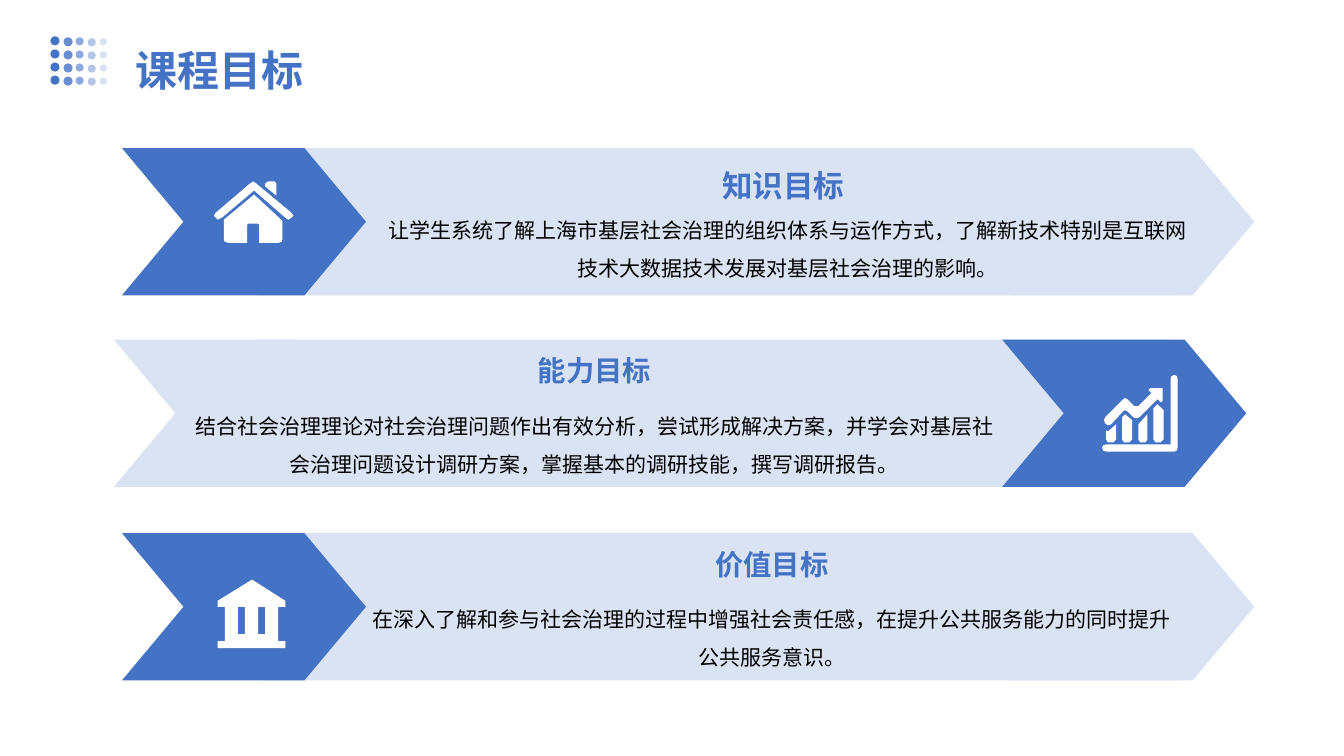
import pptx
import pptx.dml.color
import pptx.enum.shapes
import pptx.enum.text
import pptx.oxml.ns
import pptx.oxml.xmlchemy
import pptx.util

PX = 9144  # 100 px to the inch
BLUE, PALE, WHITE, BLACK = "4472C4", "DAE3F3", "FFFFFF", "000000"
FONT = "Noto Sans CJK SC"
KIND = pptx.enum.shapes.MSO_SHAPE
ALIGN = pptx.enum.text.PP_ALIGN
ANCHOR = pptx.enum.text.MSO_ANCHOR
FIT = pptx.enum.text.MSO_AUTO_SIZE
BAND, WING, BODY = 146, 242, 908


def px(*vals):
    return [pptx.util.Emu(val * PX) for val in vals]


def color(code):
    return pptx.dml.color.RGBColor.from_string(code)


def style(item, form):
    for name, val in form.items():
        setattr(item, name, val)


def node(tag, key, val):
    item = pptx.oxml.xmlchemy.OxmlElement(tag)
    item.set(key, val)
    return item


def paint(shape, code, alpha=100):
    """Give a plain fill, with alpha in percent, and no line or shadow."""
    shape.shadow.inherit = False
    shape.line.fill.background()
    shape.fill.solid()
    shape.fill.fore_color.rgb = color(code)
    if alpha < 100:
        tint = shape.fill._xPr.find(".//" + pptx.oxml.ns.qn("a:srgbClr"))
        tint.append(node("a:alpha", "val", str(alpha * 1000)))


def preset(slide, kind, box, code, alpha=100):
    paint(slide.shapes.add_shape(kind, *px(*box)), code, alpha)


def outline(slide, loops, code):
    """Draw closed loops of points as one shape."""
    pen = slide.shapes.build_freeform(*loops[0][0], scale=PX)
    for i, loop in enumerate(loops):
        if i:
            pen.move_to(*loop[0])
        pen.add_line_segments(loop[1:], close=True)
    paint(pen.convert_to_shape(), code)


def text(slide, box, words, font, code, para, pads, frame):
    area = slide.shapes.add_textbox(*px(*box)).text_frame
    sides = ("margin_left", "margin_top", "margin_right", "margin_bottom")
    style(area, {"word_wrap": True, **frame, **dict(zip(sides, px(*pads)))})
    line = area.paragraphs[0]
    style(line, para)
    run = line.add_run()
    run.text = words
    style(run.font, {"name": FONT, **font})
    run.font.color.rgb = color(code)
    latin = run.font._element.find(pptx.oxml.ns.qn("a:latin"))
    latin.addnext(node("a:ea", "typeface", FONT))


def label(slide, box, words, size, space, code, bold):
    text(slide, box, words, {"size": pptx.util.Pt(size), "bold": bold}, code,
         {"alignment": ALIGN.CENTER, "line_spacing": space},
         (7, 4, 7, 4), {"vertical_anchor": ANCHOR.MIDDLE})


def wing(slide, left, top, code):
    """Draw a chevron that points right."""
    mid, low = top + BAND // 2, top + BAND
    outline(slide, [[(left + 61, mid), (left, low), (left + 181, low),
                     (left + WING, mid), (left + 181, top), (left, top)]], code)


def band(slide, left, top, codes):
    preset(slide, KIND.RECTANGLE, (left + 139, top, BODY, BAND), PALE)
    for start, code in zip((left, left + 881), codes):
        wing(slide, start, top, code)


def block(left, top, right, low):
    return [(left, top), (right, top), (right, low), (left, low)]


def house(slide):
    flue = [(274, 182), (272, 180), (266, 180), (263, 182), (263, 185), (274, 194)]
    roof = [(289, 211), (254, 182), (251, 180), (248, 182), (214, 211), (212, 214),
            (214, 216), (216, 218), (220, 216), (252, 189), (283, 216), (286, 218),
            (289, 216), (291, 214)]
    walls = [(222, 218), (222, 238), (223, 240), (227, 241), (245, 241), (245, 223),
             (246, 222), (256, 222), (257, 223), (257, 241), (276, 241), (279, 240),
             (280, 238), (280, 219), (252, 193)]
    outline(slide, [flue, roof, walls], WHITE)


def graph(slide):
    tops = ((1097, [(1107, 421), (1099, 428), (1097, 427)]),
            (1113, [(1123, 417), (1116, 411), (1113, 414)]),
            (1129, [(1138, 411), (1129, 421)]),
            (1144, [(1154, 407), (1148, 401), (1144, 405)]))
    for left, top in tops:
        foot = [(left, 436), (left + 2, 439), (left + 7, 439), (top[0][0], 436)]
        outline(slide, [foot + top], WHITE)
    arrow = [(1114, 408), (1116, 407), (1118, 408), (1124, 414), (1127, 415),
             (1130, 414), (1148, 396), (1151, 399), (1153, 398), (1153, 387),
             (1153, 385), (1141, 385), (1139, 387), (1142, 390), (1129, 403),
             (1125, 403), (1118, 396), (1116, 395), (1114, 396), (1096, 414),
             (1095, 417), (1096, 420), (1099, 422), (1102, 421)]
    axis = [(1165, 372), (1162, 373), (1161, 376), (1161, 441), (1097, 441),
            (1094, 442), (1093, 444), (1094, 447), (1097, 448), (1165, 448),
            (1167, 447), (1168, 444), (1168, 376), (1167, 373)]
    for shape in (arrow, axis):
        outline(slide, [shape], WHITE)


def hall(slide):
    roof = [(216, 596), (250, 575), (283, 596), (283, 602), (216, 602)]
    posts = [block(left, 602, left + 13, 629) for left in (223, 243, 263)]
    outline(slide, [roof, block(216, 636, 283, 643),
                    block(223, 629, 276, 636), *posts], WHITE)


def dots(slide):
    cols = ((50, 36, 9), (63, 37, 9), (75, 37, 8), (87, 38, 8), (99, 38, 7))
    for row in range(4):
        for i, (left, top, size) in enumerate(cols):
            preset(slide, KIND.OVAL, (left, top + 13 * row, size, size),
                   BLUE, 100 - 20 * i)


def main():
    deck = pptx.Presentation()
    deck.slide_width, deck.slide_height = px(1333, 750)
    slide = deck.slides.add_slide(deck.slide_layouts[6])

    goals = (
        (121, 147, (BLUE, PALE), house, (378, 153, 798, 54), 21.8, "知识目标",
         (378, 194, 807, 94),
         "让学生系统了解上海市基层社会治理的组织体系与运作方式，"
         "了解新技术特别是互联网技术大数据技术发展对基层社会治理的影响。"),
        (113, 337, (PALE, BLUE), graph, (186, 337, 807, 54), 20.2, "能力目标",
         (186, 388, 807, 94),
         "结合社会治理理论对社会治理问题作出有效分析，尝试形成解决方案，"
         "并学会对基层社会治理问题设计调研方案，掌握基本的调研技能，撰写调研报告。"),
        (121, 529, (BLUE, PALE), hall, (362, 529, 807, 54), 20.2, "价值目标",
         (362, 580, 807, 94),
         "在深入了解和参与社会治理的过程中增强社会责任感，"
         "在提升公共服务能力的同时提升公共服务意识。"),
    )
    for left, top, codes, icon, head, size, name, area, words in goals:
        band(slide, left, top, codes)
        icon(slide)
        label(slide, area, words, 15, 1.5, BLACK, False)
        label(slide, head, name, size, 1.2, BLUE, True)

    dots(slide)
    text(slide, (120, 10, 1094, 100), "课程目标",
         {"size": pptx.util.Pt(30), "bold": True}, BLUE, {"line_spacing": 1.4},
         (14, 14, 6, 14), {"auto_size": FIT.SHAPE_TO_FIT_TEXT})
    deck.save("out.pptx")


if __name__ == "__main__":
    main()
